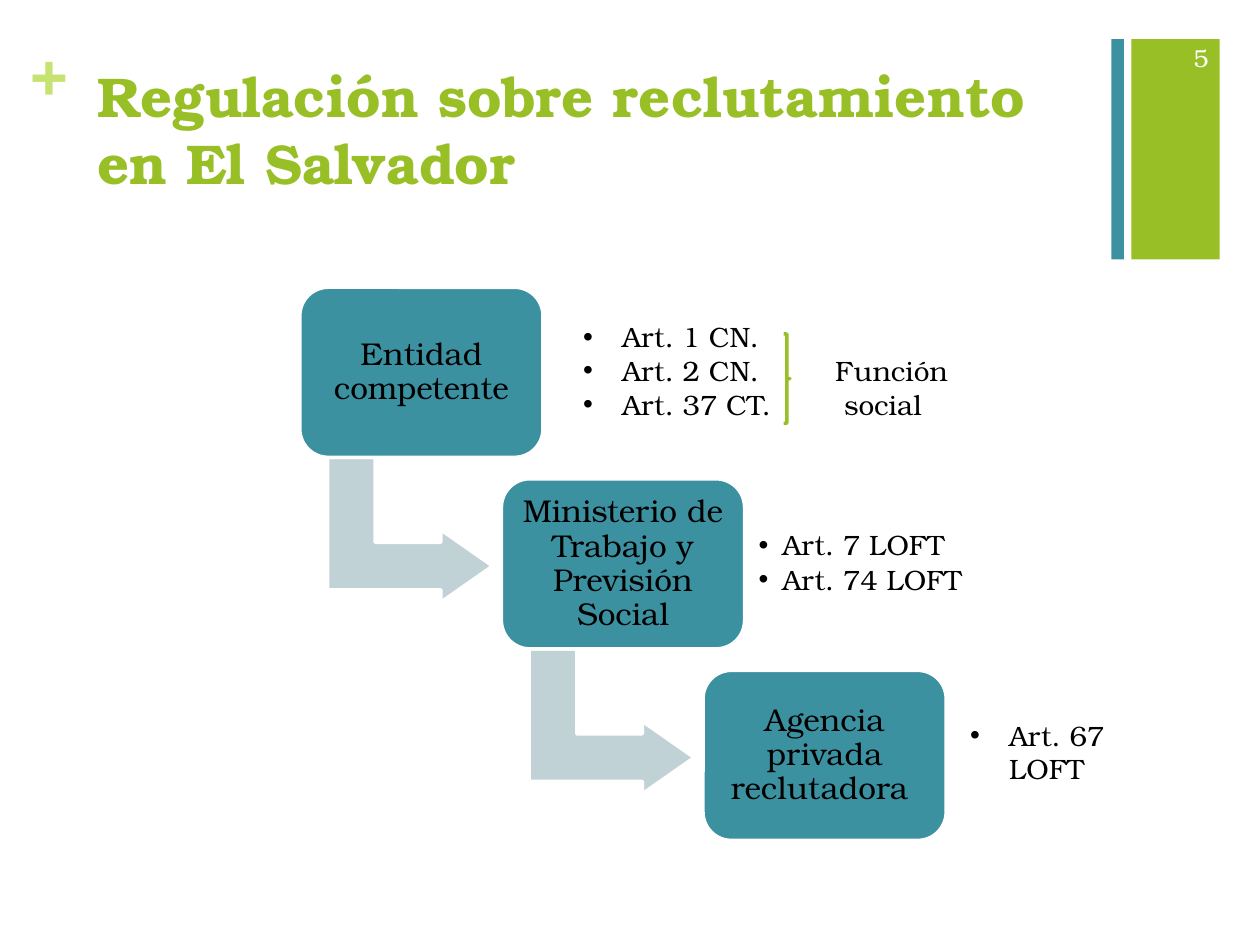
import pptx
import pptx.util
import pptx.dml.color
import pptx.enum.shapes
import pptx.enum.text
from lxml import etree

KIND = pptx.enum.shapes.MSO_SHAPE
ALIGN = pptx.enum.text.PP_ALIGN
ANCHOR = pptx.enum.text.MSO_ANCHOR
inch = pptx.util.Inches
FONT = "TeX Gyre Bonum"
GREEN, TEAL, PALE, WHITE, BLACK = "98BF26", "3C91A0", "C0D2D6", "FFFFFF", "000000"
SIDES = ("left", "top", "width", "height")


def color(code):
    return pptx.dml.color.RGBColor.from_string(code)


def assign(item, values):
    for name, value in values.items():
        setattr(item, name, value)


def draw(slide, kind, box, fill=None, line=None, adjust=()):
    shape = slide.shapes.add_shape(kind, *map(inch, box))
    shape.shadow.inherit = False
    for i, value in enumerate(adjust):
        shape.adjustments[i] = value
    if fill:
        shape.fill.solid()
        shape.fill.fore_color.rgb = color(fill)
    else:
        shape.fill.background()
    if line:
        shape.line.color.rgb = color(line)
        shape.line.width = pptx.util.Pt(2)
    else:
        shape.line.fill.background()
    return shape


def bullet(para, hang):
    props = para._p.get_or_add_pPr()
    props.set("marL", str(inch(hang)))
    props.set("indent", str(-inch(hang)))
    for tag, name, value in (("a:buFont", "typeface", "Arial"), ("a:buChar", "char", "•")):
        etree.SubElement(props, pptx.oxml.ns.qn(tag)).set(name, value)


def write(shape, lines, size, code=BLACK, bold=False, inset=(0.1, 0.05),
          anchor=ANCHOR.TOP, hang=0, **form):
    """Fill a shape with paragraphs; hang is the bullet indent in inches."""
    frame = shape.text_frame
    across, down = map(inch, inset)
    assign(frame, dict(word_wrap=True, auto_size=pptx.enum.text.MSO_AUTO_SIZE.NONE,
                       vertical_anchor=anchor, margin_left=across,
                       margin_right=across, margin_top=down, margin_bottom=down))
    for i, line in enumerate(lines):
        para = frame.add_paragraph() if i else frame.paragraphs[0]
        assign(para, dict(dict(alignment=ALIGN.LEFT), **form))
        run = para.add_run()
        run.text = line
        assign(run.font, dict(name=FONT, size=pptx.util.Pt(size), bold=bold))
        run.font.color.rgb = color(code)
        if hang:
            bullet(para, hang)


def label(slide, box, lines, size, **form):
    write(slide.shapes.add_textbox(*map(inch, box)), lines, size, **form)


def header(slide, box):
    left, top, wide, high = box
    draw(slide, KIND.RECTANGLE, (left + 8.74, top + 0.06, 0.7, 1.75), GREEN)
    draw(slide, KIND.RECTANGLE, (left + 8.58, top + 0.06, 0.1, 1.75), TEAL)
    label(slide, (left, top, 0.4, 0.61), ["+"], 36, code="C6E372", bold=True, inset=(0, 0))
    title = slide.shapes.title
    spot = (left + 0.43, top + 0.19, wide - 1.25, high - 0.56)
    assign(title, dict(zip(SIDES, map(inch, spot))))
    write(title, ["Regulación sobre reclutamiento en El Salvador"], 32, code=GREEN, bold=True)
    label(slide, (left + 8.84, top + 0.01, 0.61, 0.4), ["5"], 14, code=WHITE,
          anchor=ANCHOR.MIDDLE, alignment=ALIGN.RIGHT)


def stairs(slide, box, steps):
    """Boxes going down to the right, joined by bent arrows."""
    left, top, wide, high = box
    size = (1.93, 1.35)
    across, down = ((full - part) / (len(steps) - 1) for full, part in zip((wide, high), size))
    for i, text in enumerate(steps):
        x, y = left + i * across, top + i * down
        if i < len(steps) - 1:
            arrow = draw(slide, KIND.BENT_UP_ARROW, (x + 0.3, y + 1.27, 1.15, 1.31),
                         PALE, WHITE, (0.328, 0.25, 0.358))
            arrow.rotation = 90
        step = draw(slide, KIND.ROUNDED_RECTANGLE, (x, y, *size), TEAL, WHITE, (0.167,))
        write(step, [text], 18, inset=(0.06, 0.07), anchor=ANCHOR.MIDDLE,
              alignment=ALIGN.CENTER, line_spacing=0.9)


def notes(slide, box):
    """Legal articles beside each step, and the brace that sums up the first list."""
    left, top, wide, high = box
    label(slide, (left, top, 1.69, 0.91), ["Art. 1 CN.", "Art. 2 CN.", "Art. 37 CT."],
          16, hang=0.31)
    draw(slide, KIND.RIGHT_BRACE, (left + 1.69, top + 0.16, 0.05, 0.71), line=GREEN,
         adjust=(0.083, 0.5))
    label(slide, (left + 2, top + 0.27, 1.39, 0.64), ["Función", " social"], 16)
    label(slide, (left + 1.42, top + 1.44, 1.81, 1.09), ["Art. 7 LOFT", "Art. 74 LOFT"], 16,
          hang=0.19, inset=(0.07, 0.07), anchor=ANCHOR.MIDDLE,
          line_spacing=0.9, space_after=pptx.util.Pt(2.4))
    label(slide, (left + wide - 1.89, top + high - 0.67, 1.89, 0.67), ["Art. 67 LOFT"],
          16, hang=0.31)


def main():
    deck = pptx.Presentation()
    assign(deck, dict(slide_width=inch(10), slide_height=inch(7.5)))
    slide = deck.slides.add_slide(deck.slide_layouts[5])
    header(slide, (0.24, 0.25, 9.44, 1.81))
    stairs(slide, (2.38, 2.28, 5.13, 4.39),
           ["Entidad competente", "Ministerio de Trabajo y Previsión Social",
            "Agencia privada reclutadora "])
    notes(slide, (4.53, 2.49, 4.96, 3.83))
    deck.save("out.pptx")


if __name__ == "__main__":
    main()
